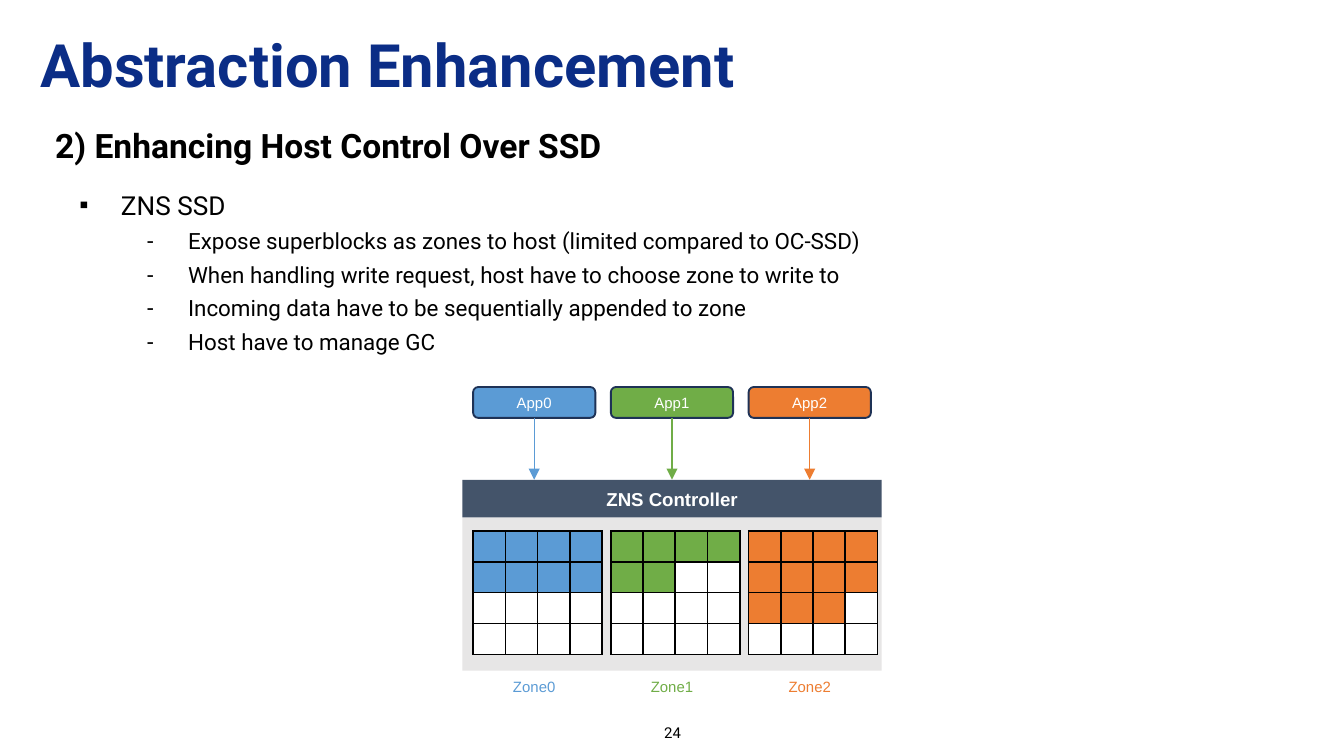
from lxml import etree
from pptx import Presentation
from pptx.dml.color import RGBColor
from pptx.enum.shapes import MSO_CONNECTOR as Connector, MSO_SHAPE as Shape
from pptx.enum.text import MSO_ANCHOR as Anchor, PP_ALIGN as Align
from pptx.oxml import parse_xml
from pptx.oxml.ns import nsdecls, qn
from pptx.util import Inches, Pt

BLACK = RGBColor(0x00, 0x00, 0x00)
WHITE = RGBColor(0xFF, 0xFF, 0xFF)
NAVY = RGBColor(0x0B, 0x2D, 0x86)
OUTLINE = RGBColor(0x1E, 0x32, 0x56)
SLATE = RGBColor(0x44, 0x54, 0x6A)
GRAY = RGBColor(0xE7, 0xE6, 0xE6)
BLUE = RGBColor(0x5B, 0x9B, 0xD5)
GREEN = RGBColor(0x70, 0xAD, 0x47)
ORANGE = RGBColor(0xED, 0x7D, 0x31)

BULLETS = [
    (0, "ZNS SSD"),
    (1, "Expose superblocks as zones to host (limited compared to OC-SSD)"),
    (1, "When handling write request, host have to choose zone to write to"),
    (1, "Incoming data have to be sequentially appended to zone"),
    (1, "Host have to manage GC"),
]
LEVELS = [("▪", 0.47, 14), ("-", 0.97, 12)]
ZONES = [(BLUE, 8), (GREEN, 6), (ORANGE, 11)]
ZONE_LEFT, ZONE_RIGHT, ZONE_WIDTH = 3.52, 5.57, 0.91
ZONE_PITCH = (ZONE_RIGHT - ZONE_LEFT) / 2
GRID_SIZE, CELL_WIDTH, CELL_HEIGHT = 4, 0.24, 0.23


class SlideBuilder:
    heading_font = "Roboto"
    diagram_font = "Arial"

    def __init__(self, slide):
        self.slide = slide

    def format_runs(self, paragraph, size, color, font, bold=False):
        for run in paragraph.runs:
            run.font.size = Pt(size)
            run.font.name = font
            run.font.bold = bold
            run.font.color.rgb = color

    def text(self, box, content, size, color=BLACK, font=heading_font,
             bold=False, align=Align.LEFT, spacing=1.0):
        shape = self.slide.shapes.add_textbox(*map(Inches, box))
        frame = shape.text_frame
        frame.word_wrap = True
        frame.vertical_anchor = Anchor.MIDDLE
        frame.margin_left = frame.margin_right = Inches(0.07)
        frame.margin_top = frame.margin_bottom = Inches(0.04)
        frame.text = content
        paragraph = frame.paragraphs[0]
        paragraph.alignment = align
        paragraph.line_spacing = spacing
        self.format_runs(paragraph, size, color, font, bold)
        return shape

    def bullets(self, box, items):
        frame = self.text(box, "", 14).text_frame
        frame.vertical_anchor = Anchor.TOP
        for index, (level, content) in enumerate(items):
            mark, indent, size = LEVELS[level]
            paragraph = frame.add_paragraph() if index else frame.paragraphs[0]
            paragraph.text = content
            paragraph.level = level
            paragraph.line_spacing = 1.25
            properties = paragraph._p.get_or_add_pPr()
            properties.set("marL", str(Inches(indent)))
            properties.set("indent", str(Inches(-0.31)))
            color = etree.SubElement(properties, qn("a:buClr"))
            etree.SubElement(color, qn("a:srgbClr"), val=str(BLACK))
            etree.SubElement(properties, qn("a:buFont"), typeface=self.diagram_font)
            etree.SubElement(properties, qn("a:buChar"), char=mark)
            self.format_runs(paragraph, size, BLACK, self.heading_font)

    def block(self, kind, box, fill, label="", size=8, bold=False, line=None):
        shape = self.slide.shapes.add_shape(kind, *map(Inches, box))
        shape.shadow.inherit = False
        shape.fill.solid()
        shape.fill.fore_color.rgb = fill
        if line is None:
            shape.line.fill.background()
        else:
            shape.line.color.rgb = line
            shape.line.width = Pt(1)
        if label:
            frame = shape.text_frame
            frame.text = label
            frame.vertical_anchor = Anchor.MIDDLE
            paragraph = frame.paragraphs[0]
            paragraph.alignment = Align.CENTER
            self.format_runs(paragraph, size, WHITE, self.diagram_font, bold)
        return shape

    def grid(self, left, top, color, filled):
        frame = self.slide.shapes.add_table(
            GRID_SIZE, GRID_SIZE, Inches(left), Inches(top),
            Inches(CELL_WIDTH * GRID_SIZE), Inches(CELL_HEIGHT * GRID_SIZE))
        table = frame.table
        table.first_row = table.horz_banding = False
        for column in table.columns:
            column.width = Inches(CELL_WIDTH)
        for row in table.rows:
            row.height = Inches(CELL_HEIGHT)
        for index, cell in enumerate(table.iter_cells()):
            cell.margin_left = cell.margin_right = 0
            cell.margin_top = cell.margin_bottom = 0
            cell.text_frame.paragraphs[0]._p.get_or_add_endParaRPr().set("sz", "800")
            properties = cell._tc.get_or_add_tcPr()
            for side in ("lnL", "lnR", "lnT", "lnB"):
                properties.append(parse_xml(
                    f'<a:{side} {nsdecls("a")} w="{Pt(1)}"><a:solidFill>'
                    f'<a:srgbClr val="{BLACK}"/></a:solidFill></a:{side}>'))
            cell.fill.solid()
            cell.fill.fore_color.rgb = color if index < filled else WHITE

    def arrow(self, source, x, top, bottom, color, target=None):
        connector = self.slide.shapes.add_connector(
            Connector.STRAIGHT, Inches(x), Inches(top), Inches(x), Inches(bottom))
        connector.begin_connect(source, 2)
        if target is not None:
            connector.end_connect(target, 0)
        connector.line.color.rgb = color
        connector.line.width = Pt(0.75)
        etree.SubElement(connector.line._get_or_add_ln(), qn("a:tailEnd"), type="triangle")
        etree.SubElement(connector._element.spPr, qn("a:effectLst"))


def main():
    presentation = Presentation()
    presentation.slide_width = Inches(10)
    presentation.slide_height = Inches(10) * 9 // 16
    builder = SlideBuilder(presentation.slides.add_slide(presentation.slide_layouts[6]))

    builder.block(Shape.RECTANGLE, (3.44, 3.85, 3.12, 1.14), GRAY)
    builder.bullets((0.36, 1.31, 9.29, 3.94), BULLETS)
    builder.text((0.23, 0.17, 6.82, 0.68), "Abstraction Enhancement", 32, NAVY,
                 bold=True, spacing=0.9)
    builder.text((3.88, 5.33, 2.25, 0.24), "24", 8, align=Align.CENTER)
    builder.text((0.34, 0.85, 9.31, 0.46), "2) Enhancing Host Control Over SSD", 18, bold=True)

    controller = builder.block(Shape.RECTANGLE, (3.44, 3.57, 3.12, 0.28), SLATE,
                               "ZNS Controller", 10, bold=True)
    for index, (color, filled) in enumerate(ZONES):
        left = ZONE_LEFT + index * ZONE_PITCH
        center = left + ZONE_WIDTH / 2
        builder.grid(left, 3.95, color, filled)
        label = builder.text((center - 0.26, 4.99, 0.52, 0.24), f"Zone{index}", 8, color,
                             builder.diagram_font, align=Align.CENTER)
        label.text_frame.word_wrap = False
        app = builder.block(Shape.ROUNDED_RECTANGLE, (left, 2.88, ZONE_WIDTH, 0.23), color,
                            f"App{index}", line=OUTLINE)
        builder.arrow(app, center, 3.11, 3.57, color, controller if index == 1 else None)

    presentation.save("out.pptx")


if __name__ == "__main__":
    main()
